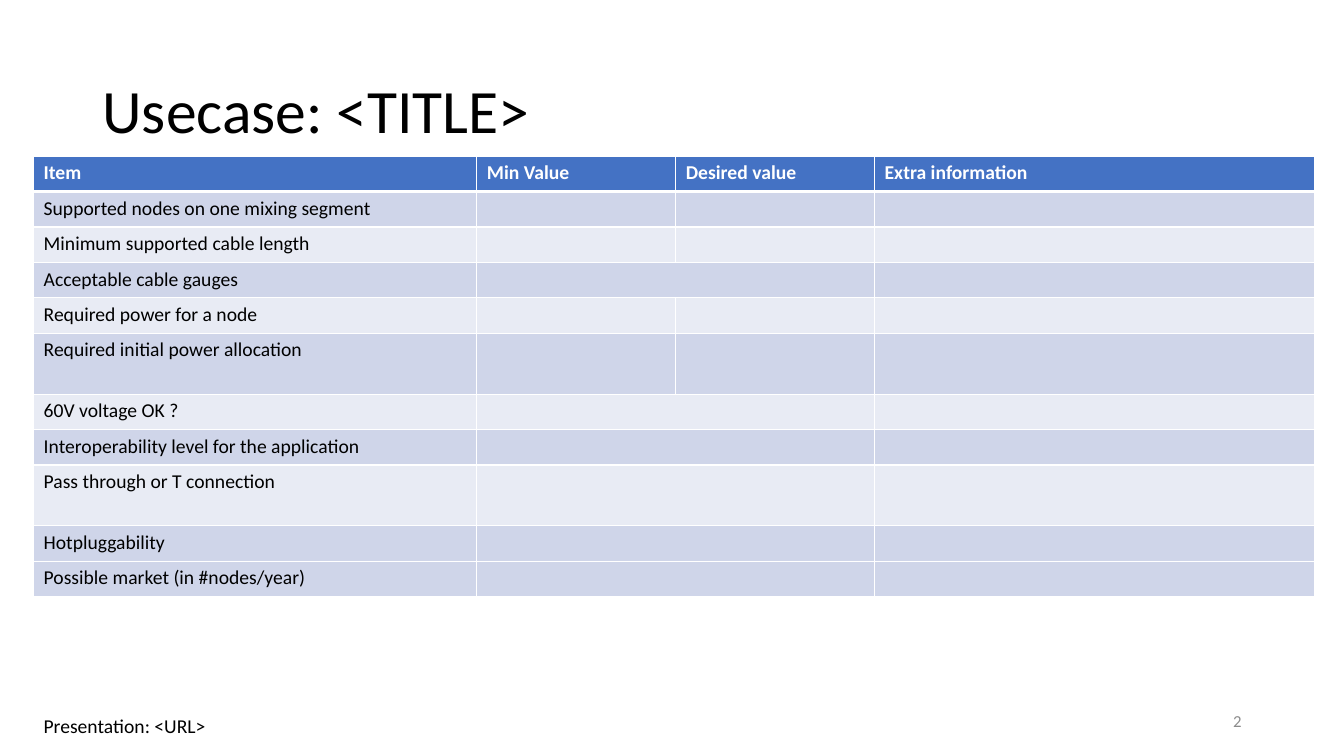
from lxml.etree import SubElement
from pptx import Presentation
from pptx.dml.color import RGBColor
from pptx.enum.text import MSO_ANCHOR, PP_ALIGN
from pptx.oxml.ns import qn
from pptx.util import Pt

# Content
TITLE = "Usecase: <TITLE>"
HEADINGS = ["Item", "Min Value", "Desired value", "Extra information"]
BLUE = RGBColor(0x44, 0x72, 0xC4)
DARK_BAND = RGBColor(0xCF, 0xD5, 0xE9)
LIGHT_BAND = RGBColor(0xE8, 0xEB, 0xF4)
WHITE = RGBColor(0xFF, 0xFF, 0xFF)
BLACK = RGBColor(0, 0, 0)
GREY = RGBColor(0x8C, 0x8C, 0x8C)
LOW, TALL = 25.3, 43.5
# Item, row height, whether the two value columns are merged, band colour
ITEMS = [
    ("Supported nodes on one mixing segment", LOW, False, DARK_BAND),
    ("Minimum supported cable length", LOW, False, LIGHT_BAND),
    ("Acceptable cable gauges", LOW, True, DARK_BAND),
    ("Required power for a node", LOW, False, LIGHT_BAND),
    ("Required initial power allocation", TALL, False, DARK_BAND),
    ("60V voltage OK ?", LOW, True, LIGHT_BAND),
    ("Interoperability level for the application", LOW, True, DARK_BAND),
    ("Pass through or T connection", TALL, True, LIGHT_BAND),
    ("Hotpluggability", LOW, True, DARK_BAND),
    ("Possible market (in #nodes/year)", LOW, True, DARK_BAND),
]
PRESENTATION_LINK = "Presentation: <URL>"
PAGE_NUMBER = "2"

# Layout and formats, in points
COLUMN_WIDTHS = [316.6, 142.1, 142.1, 314.5]
LEFT_EDGE, TABLE_TOP = 24, 111.6
THIN, THICK = 0.96, 3
TITLE_FORMAT = {"size": Pt(44), "name": "Calibri", "bold": False}
TABLE_FORMAT = {"size": Pt(14), "name": "Calibri"}
LINK_FORMAT = {"size": Pt(14), "name": "Calibri"}
NUMBER_FORMAT = {"size": Pt(12), "name": "Calibri"}


def write(paragraph, text, formats, color):
    run = paragraph.add_run()
    run.text = text
    for attribute, value in formats.items():
        setattr(run.font, attribute, value)
    run.font.color.rgb = color


def add_borders(cell, top, bottom):
    properties = cell._tc.get_or_add_tcPr()
    for side, width in (("L", THIN), ("R", THIN), ("T", top), ("B", bottom)):
        line = SubElement(properties, qn(f"a:ln{side}"), w=str(Pt(width)))
        line_fill = SubElement(line, qn("a:solidFill"))
        SubElement(line_fill, qn("a:srgbClr"), val=str(WHITE))


def add_text(slide, box, text, formats, color, align, anchor):
    frame = slide.shapes.add_textbox(*map(Pt, box)).text_frame
    frame.word_wrap = True
    frame.vertical_anchor = anchor
    frame.paragraphs[0].alignment = align
    write(frame.paragraphs[0], text, formats, color)


def add_title(slide):
    title = slide.shapes.title
    title.left, title.top, title.width, title.height = map(Pt, (66, 28.8, 828, 104.4))
    title.text_frame.vertical_anchor = MSO_ANCHOR.MIDDLE
    heading = title.text_frame.paragraphs[0]
    heading.alignment = PP_ALIGN.LEFT
    heading.line_spacing = 0.9
    write(heading, TITLE, TITLE_FORMAT, BLACK)


def add_requirements(slide):
    heights = [LOW] + [height for _, height, _, _ in ITEMS]
    box = (LEFT_EDGE, TABLE_TOP, sum(COLUMN_WIDTHS), sum(heights))
    table = slide.shapes.add_table(
        len(heights), len(HEADINGS), *map(Pt, box)).table
    for column, width in zip(table.columns, COLUMN_WIDTHS):
        column.width = Pt(width)
    for row, height in zip(table.rows, heights):
        row.height = Pt(height)

    rows = [(HEADINGS, BLUE, WHITE)]
    rows += [([item, "", "", ""], band, BLACK) for item, _, _, band in ITEMS]
    for row_index, (texts, fill, color) in enumerate(rows):
        top = THICK if row_index == 1 else THIN
        bottom = THICK if row_index == 0 else THIN
        for column_index, text in enumerate(texts):
            cell = table.cell(row_index, column_index)
            add_borders(cell, top, bottom)
            cell.fill.solid()
            cell.fill.fore_color.rgb = fill
            paragraph = cell.text_frame.paragraphs[0]
            if text:
                formats = {**TABLE_FORMAT, "bold": row_index == 0}
                write(paragraph, text, formats, color)
            else:
                # Empty cells need the small size too, or the row grows
                SubElement(paragraph._p, qn("a:endParaRPr"), sz="1400")

    for row_index, (_, _, merged, _) in enumerate(ITEMS, start=1):
        if merged:
            table.cell(row_index, 1).merge(table.cell(row_index, 2))


def main():
    deck = Presentation()
    deck.slide_width, deck.slide_height = Pt(960), Pt(540)
    slide = deck.slides.add_slide(deck.slide_layouts[5])
    add_title(slide)
    add_requirements(slide)
    # Footer
    add_text(slide, (678, 500.4, 216, 28.8), PAGE_NUMBER, NUMBER_FORMAT,
             GREY, PP_ALIGN.RIGHT, MSO_ANCHOR.MIDDLE)
    add_text(slide, (LEFT_EDGE, 506.2, 831.6, 24.5), PRESENTATION_LINK, LINK_FORMAT,
             BLACK, PP_ALIGN.LEFT, MSO_ANCHOR.TOP)
    deck.save("out.pptx")


if __name__ == "__main__":
    main()
